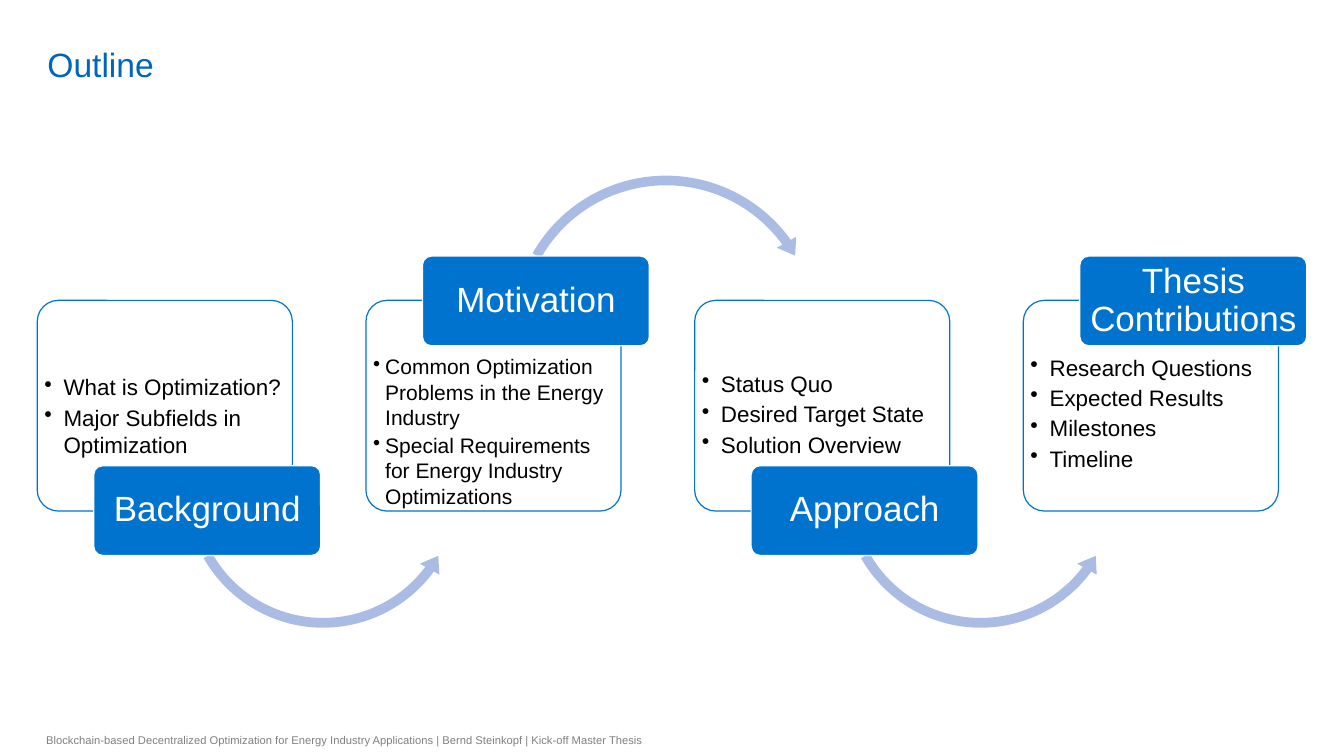
from dataclasses import dataclass

from lxml import etree
from pptx import Presentation
from pptx.dml.color import RGBColor
from pptx.enum.shapes import MSO_SHAPE as SHAPE
from pptx.enum.text import MSO_ANCHOR as ANCHOR, PP_ALIGN as ALIGN
from pptx.oxml.ns import qn
from pptx.util import Inches, Pt


@dataclass(frozen=True)
class Theme:
    font: str = "Arial"
    title: str = "0065BD"
    accent: str = "0073CF"
    arrow: str = "ABBCE4"
    white: str = "FFFFFF"
    text: str = "000000"
    muted: str = "808080"
    title_size: int = 24
    label_size: int = 25
    footer_size: int = 8


THEME = Theme()
CARD_W, CARD_H = 2.53, 2.09
LABEL_W, LABEL_H = 2.25, 0.89
LABEL_DX = 0.56
PITCH = 3.26

# heading, bullets, bullet size, bullet indent, label on top
STAGES = [
    ("Background", ["What is Optimization?", "Major Subfields in Optimization"],
     16, 0.19, False),
    ("Motivation", ["Common Optimization Problems in the Energy Industry",
                    "Special Requirements for Energy Industry Optimizations"],
     15, 0.12, True),
    ("Approach", ["Status Quo", "Desired Target State", "Solution Overview"],
     16, 0.19, False),
    ("Thesis Contributions", ["Research Questions", "Expected Results",
                              "Milestones", "Timeline"],
     16, 0.19, True),
]


def style_font(font, size, color):
    font.name, font.size = THEME.font, Pt(size)
    font.color.rgb = RGBColor.from_string(color)


def set_insets(tf, left, top, right, bottom):
    tf.margin_left, tf.margin_top = Inches(left), Inches(top)
    tf.margin_right, tf.margin_bottom = Inches(right), Inches(bottom)


def add_bullet(p, indent):
    pPr = p._p.get_or_add_pPr()
    pPr.set("marL", str(Inches(indent)))
    pPr.set("indent", str(-Inches(indent)))
    etree.SubElement(pPr, qn("a:buChar")).set("char", "•")


def add_shape(s, kind, box, fill, line=None, adjustments=(0.1,)):
    sp = s.shapes.add_shape(kind, *map(Inches, box))
    sp.shadow.inherit = False
    for i, value in enumerate(adjustments):
        sp.adjustments[i] = value
    sp.fill.solid()
    sp.fill.fore_color.rgb = RGBColor.from_string(fill)
    if line:
        sp.line.color.rgb = RGBColor.from_string(line)
        sp.line.width = Pt(0.85)
    else:
        sp.line.fill.background()
    return sp


def add_card(s, x, y, bullets, size, indent, label_on_top):
    """Outlined card whose text keeps clear of the label."""
    sp = add_shape(s, SHAPE.ROUNDED_RECTANGLE, (x, y, CARD_W, CARD_H),
                   THEME.white, THEME.accent)
    color = sp.fill._xPr.find(qn("a:solidFill"))[0]
    etree.SubElement(color, qn("a:alpha")).set("val", "90000")
    tf = sp.text_frame
    tf.word_wrap = True
    near, far = 0.47, 0.02
    if label_on_top:
        tf.vertical_anchor = ANCHOR.TOP
        set_insets(tf, 0.01, near, 0.01, far)
    else:
        tf.vertical_anchor = ANCHOR.BOTTOM
        set_insets(tf, 0.01, far, 0.01, near)
    tf.text = "\n".join(bullets)
    for p in tf.paragraphs:
        p.alignment = ALIGN.LEFT
        p.space_after = Pt(0.15 * size)
        add_bullet(p, indent)
        style_font(p.runs[0].font, size, THEME.text)


def add_label(s, x, y, heading):
    sp = add_shape(s, SHAPE.ROUNDED_RECTANGLE, (x, y, LABEL_W, LABEL_H),
                   THEME.accent, THEME.white)
    tf = sp.text_frame
    tf.word_wrap = True
    tf.vertical_anchor = ANCHOR.MIDDLE
    set_insets(tf, 0.05, 0.03, 0.05, 0.03)
    tf.text = heading
    p = tf.paragraphs[0]
    p.alignment = ALIGN.CENTER
    p.line_spacing = 0.9
    style_font(p.runs[0].font, THEME.label_size, THEME.white)


def add_arrow(s, x, y, over):
    """Curved arrow to the next card, passing over or under the row."""
    if over:
        add_shape(s, SHAPE.CIRCULAR_ARROW, (x + 1.39, y - 1.3, 3.17, 3.17),
                  THEME.arrow,
                  adjustments=(0.03, 3.69, 194.55, 125.76, 0.035))
    else:
        add_shape(s, SHAPE.LEFT_CIRCULAR_ARROW, (x + 1.41, y + 0.46, 2.85, 2.85),
                  THEME.arrow,
                  adjustments=(0.034, 4.14, 21.9, 90.25, 0.039))


def add_process(s, x, y):
    for i, (heading, bullets, size, indent, on_top) in enumerate(STAGES):
        left = x + i * PITCH
        add_card(s, left, y, bullets, size, indent, on_top)
        if i < len(STAGES) - 1:
            add_arrow(s, left, y, on_top)
        add_label(s, left + LABEL_DX, y + (-0.44 if on_top else 1.64), heading)


def set_title(s, x, y, w, h, text):
    sp = s.shapes.title
    sp.left, sp.top, sp.width, sp.height = map(Inches, (x, y, w, h))
    tf = sp.text_frame
    tf.vertical_anchor = ANCHOR.BOTTOM
    set_insets(tf, 0.1, 0, 0.1, 0)
    tf.text = text
    tf.paragraphs[0].alignment = ALIGN.LEFT
    style_font(tf.paragraphs[0].runs[0].font, THEME.title_size, THEME.title)


def add_footer(s, x, y, w, h, text):
    tf = s.shapes.add_textbox(*map(Inches, (x, y, w, h))).text_frame
    tf.word_wrap = True
    tf.vertical_anchor = ANCHOR.MIDDLE
    tf.text = text
    style_font(tf.paragraphs[0].runs[0].font, THEME.footer_size, THEME.muted)


def main():
    prs = Presentation()
    prs.slide_width, prs.slide_height = Inches(13.33), Inches(7.5)
    s = prs.slides.add_slide(prs.slide_layouts.get_by_name("Title Only"))
    add_process(s, 0.37, 2.98)
    set_title(s, 0.37, 0.05, 11.58, 0.79, "Outline")
    add_footer(s, 0.36, 7.18, 6.3, 0.32,
               "Blockchain-based Decentralized Optimization for Energy Industry "
               "Applications | Bernd Steinkopf | Kick-off Master Thesis")
    prs.save("out.pptx")


if __name__ == "__main__":
    main()
